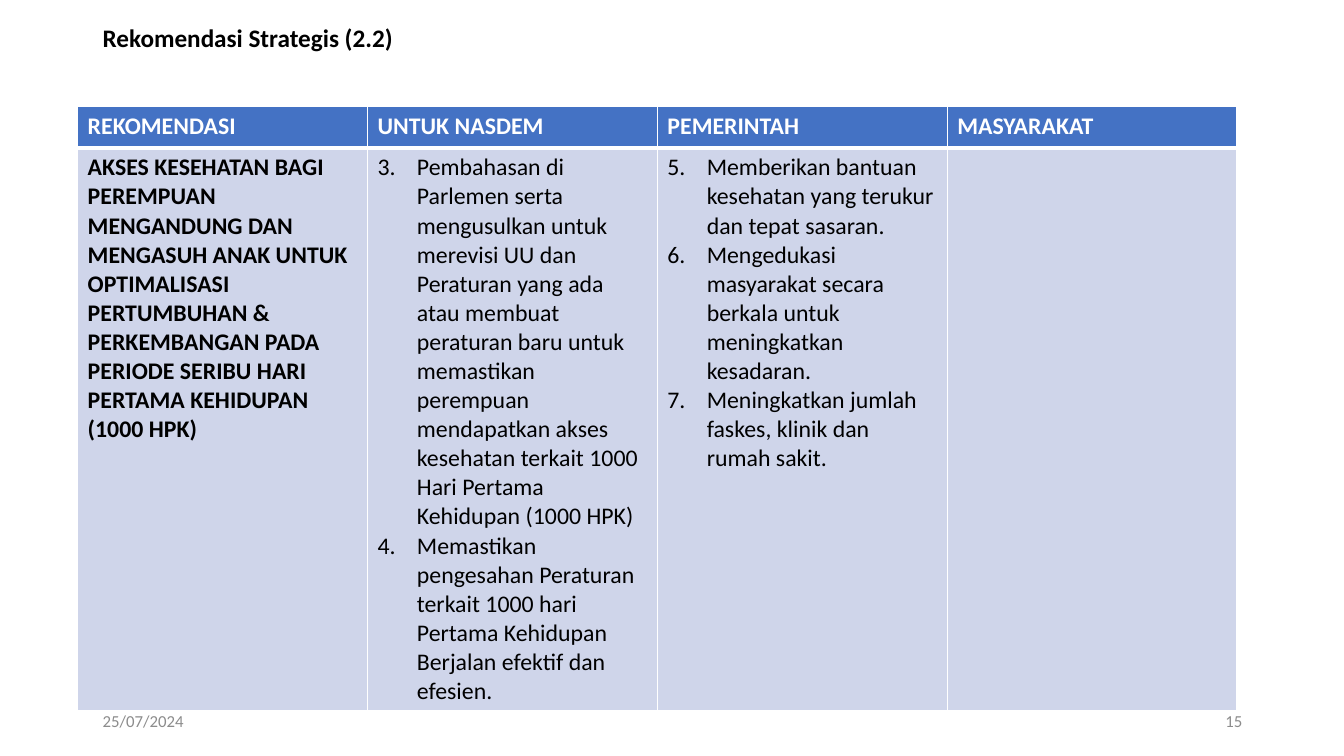
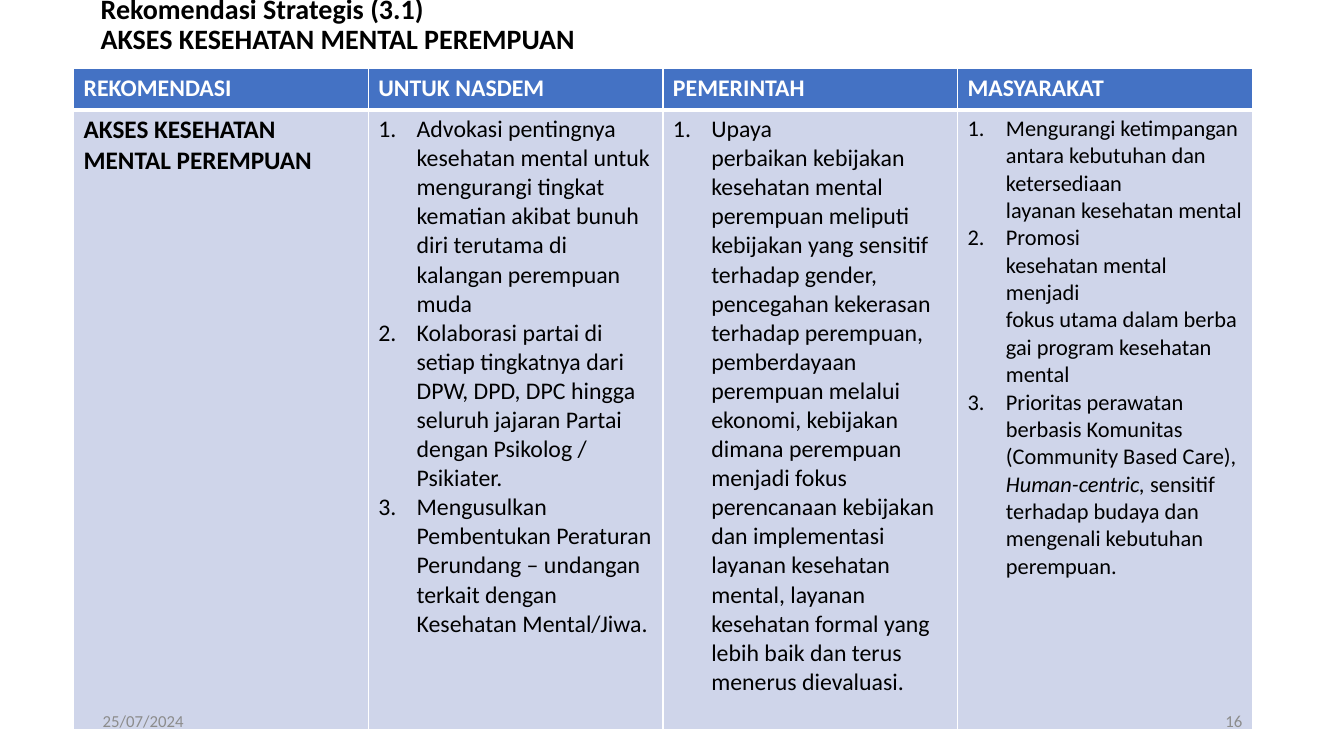
from lxml.etree import SubElement
from pptx import Presentation
from pptx.dml.color import RGBColor
from pptx.enum.text import MSO_ANCHOR as Anchor, PP_ALIGN as Align
from pptx.oxml import parse_xml
from pptx.oxml.ns import qn
from pptx.util import Inches, Pt

HUE = {"ink": "000000", "white": "FFFFFF", "head": "4472C4",
       "body": "CFD5EA", "foot": "8C8C8C"}
FONT = "Calibri"
NS = "http://schemas.openxmlformats.org/drawingml/2006/main"
HEADS = ["REKOMENDASI", "UNTUK NASDEM", "PEMERINTAH", "MASYARAKAT"]
DATE = "25/07/2024"
HEAD_H = 0.41
HARD = chr(160)  # no-break space, marked ~ in the texts below

# Each column: text size, first number (None for bold plain text), paragraphs.
# A paragraph is a list of runs; a run that starts with "^" is italic.
PAGES = [
    {"no": "15", "title": ["Rekomendasi Strategis (2.2)"], "size": 18,
     "box": (0.92, -0.2), "base": 0.32, "grid": (0.77, 1.06, 11.5, 5.58),
     "indent": 0.39,
     "cols": [
         (17, None, [
             ["AKSES KESEHATAN BAGI PEREMPUAN"],
             ["MENGANDUNG DAN MENGASUH ANAK UNTUK OPTIMALISASI PERTUMBUHAN & "
              "PERKEMBANGAN PADA PERIODE SERIBU HARI PERTAMA KEHIDUPAN (1000 HPK)"]]),
         (17, 3, [
             ["Pembahasan di Parlemen serta mengusulkan untuk merevisi UU dan "
              "Peraturan yang ada atau membuat peraturan baru untuk memastikan "
              "perempuan mendapatkan akses kesehatan terkait 1000 Hari Pertama "
              "Kehidupan (1000 HPK)"],
             ["Memastikan pengesahan Peraturan terkait 1000 hari Pertama "
              "Kehidupan Berjalan efektif dan efesien."]]),
         (17, 5, [
             ["Memberikan bantuan kesehatan yang terukur dan tepat sasaran."],
             ["Mengedukasi masyarakat secara berkala untuk meningkatkan kesadaran."],
             ["Meningkatkan jumlah faskes, klinik dan rumah sakit."]]),
         (17, None, []),
     ]},
    {"no": "16", "size": 20,
     "title": ["Rekomendasi Strategis (3.1)", "AKSES KESEHATAN MENTAL PEREMPUAN"],
     "box": (0.9, -0.3), "base": 0.39, "grid": (0.73, 0.68, 11.69, 6.15),
     "indent": 0.38,
     "cols": [
         (18, None, [["AKSES KESEHATAN MENTAL PEREMPUAN"]]),
         (17, 1, [
             ["Advokasi pentingnya kesehatan mental untuk mengurangi tingkat "
              "kematian akibat bunuh diri terutama di kalangan perempuan muda"],
             ["Kolaborasi partai di setiap tingkatnya dari DPW, DPD, DPC hingga "
              "seluruh jajaran Partai dengan Psikolog / Psikiater."],
             ["Mengusulkan Pembentukan Peraturan Perundang – undangan terkait "
              "dengan Kesehatan Mental/Jiwa."]]),
         (17, 1, [
             ["Upaya perbaikan~kebijakan kesehatan mental perempuan meliputi "
              "kebijakan yang sensitif terhadap gender, pencegahan kekerasan "
              "terhadap perempuan, pemberdayaan perempuan melalui ekonomi, "
              "kebijakan dimana perempuan menjadi fokus perencanaan kebijakan "
              "dan implementasi layanan kesehatan mental, layanan kesehatan "
              "formal yang lebih baik dan terus menerus dievaluasi."]]),
         (16, 1, [
             ["Mengurangi ketimpangan antara kebutuhan dan ketersediaan "
              "layanan~kesehatan~mental"],
             ["Promosi kesehatan~mental menjadi fokus~utama~dalam~berbagai "
              "program~kesehatan mental"],
             ["Prioritas perawatan berbasis Komunitas (Community Based Care), ",
              "^Human-centric, ",
              "sensitif terhadap budaya dan mengenali~kebutuhan perempuan."]]),
     ]},
]


def add_run(para, text, size, hue, bold=False):
    run = para.add_run()
    run.text = text.removeprefix("^").replace("~", HARD)
    font = run.font
    font.name, font.size, font.bold = FONT, Pt(size), bold
    font.italic = text.startswith("^")
    font.color.rgb = RGBColor.from_string(HUE[hue])


def style_cell(cell, hue, top, base):
    """Fill a cell and draw its white borders; top and base are widths in points."""
    cell.fill.solid()
    cell.fill.fore_color.rgb = RGBColor.from_string(HUE[hue])
    props = cell._tc.get_or_add_tcPr()
    for i, (side, wide) in enumerate(zip("LRTB", (1, 1, top, base))):
        props.insert(i, parse_xml(
            f'<a:ln{side} xmlns:a="{NS}" w="{Pt(wide)}"><a:solidFill>'
            f'<a:srgbClr val="{HUE["white"]}"/></a:solidFill></a:ln{side}>'))


deck = Presentation()
deck.slide_width, deck.slide_height = Inches(13.33), Inches(7.5)

for page in PAGES:
    slide = deck.slides.add_slide(deck.slide_layouts[6])

    x, y = page["box"]
    frame = slide.shapes.add_textbox(
        Inches(x), Inches(y), Inches(11.5), Inches(1.45)).text_frame
    frame.word_wrap = True
    frame.vertical_anchor = Anchor.MIDDLE
    frame.margin_bottom = Inches(page["base"])
    para = frame.paragraphs[0]
    para.line_spacing = 0.9
    for i, line in enumerate(page["title"]):
        if i:
            para.add_line_break()
        add_run(para, line, page["size"], "ink", True)

    x, y, wide, high = page["grid"]
    table = slide.shapes.add_table(
        2, len(HEADS), Inches(x), Inches(y), Inches(wide),
        Inches(HEAD_H + high)).table
    table.rows[0].height, table.rows[1].height = Inches(HEAD_H), Inches(high)
    for i, (head, (size, start, items)) in enumerate(zip(HEADS, page["cols"])):
        table.columns[i].width = Inches(wide / len(HEADS))
        top, cell = table.cell(0, i), table.cell(1, i)
        style_cell(top, "head", 1, 3)
        style_cell(cell, "body", 3, 1)
        add_run(top.text_frame.paragraphs[0], head, 17, "white", True)
        frame = cell.text_frame
        for j, item in enumerate(items):
            para = frame.add_paragraph() if j else frame.paragraphs[0]
            if start:
                props = para._p.get_or_add_pPr()
                dent = Inches(page["indent"])
                props.set("marL", str(dent))
                props.set("indent", str(-dent))
                SubElement(props, qn("a:buAutoNum"),
                           type="arabicPeriod", startAt=str(start))
            for text in item:
                add_run(para, text, size, "ink", start is None)

    for x, text, align in ((0.92, DATE, Align.LEFT), (9.42, page["no"], Align.RIGHT)):
        frame = slide.shapes.add_textbox(
            Inches(x), Inches(6.95), Inches(3), Inches(0.4)).text_frame
        frame.word_wrap = True
        frame.vertical_anchor = Anchor.MIDDLE
        para = frame.paragraphs[0]
        para.alignment = align
        add_run(para, text, 12, "foot")

deck.save("out.pptx")
